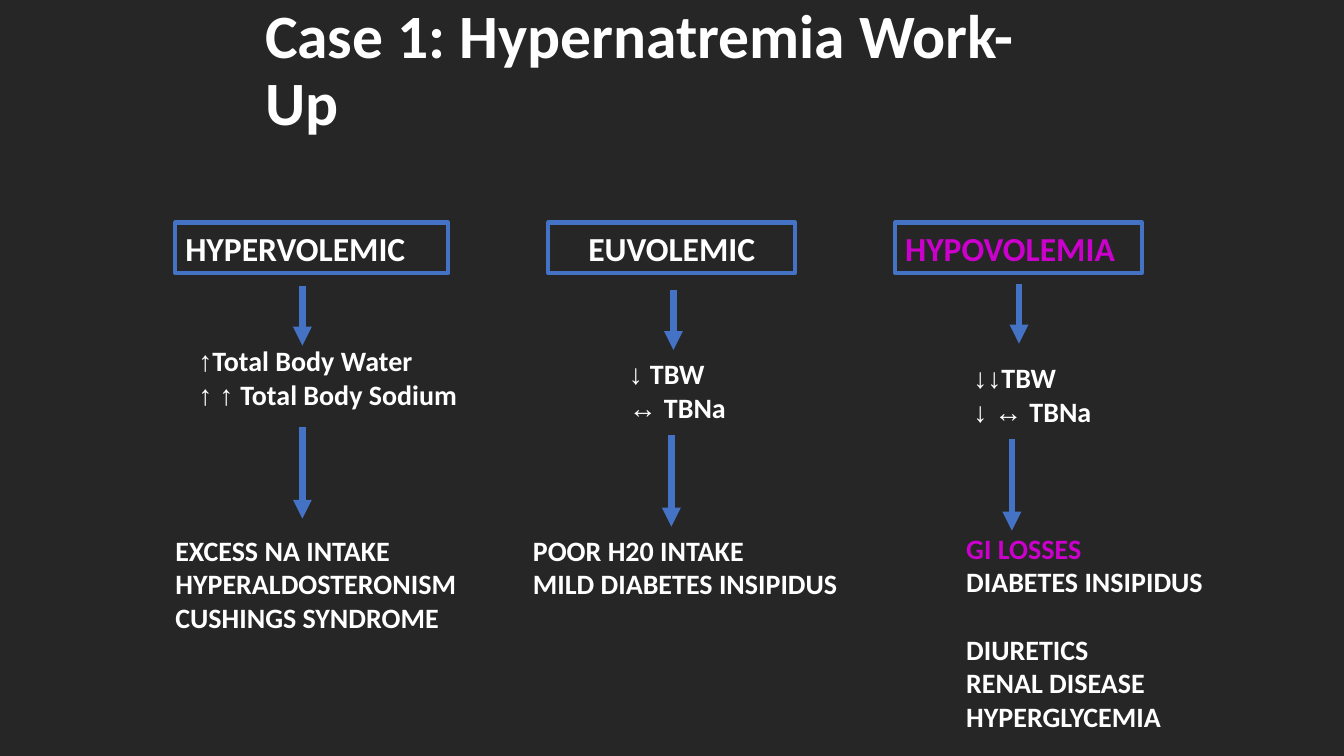
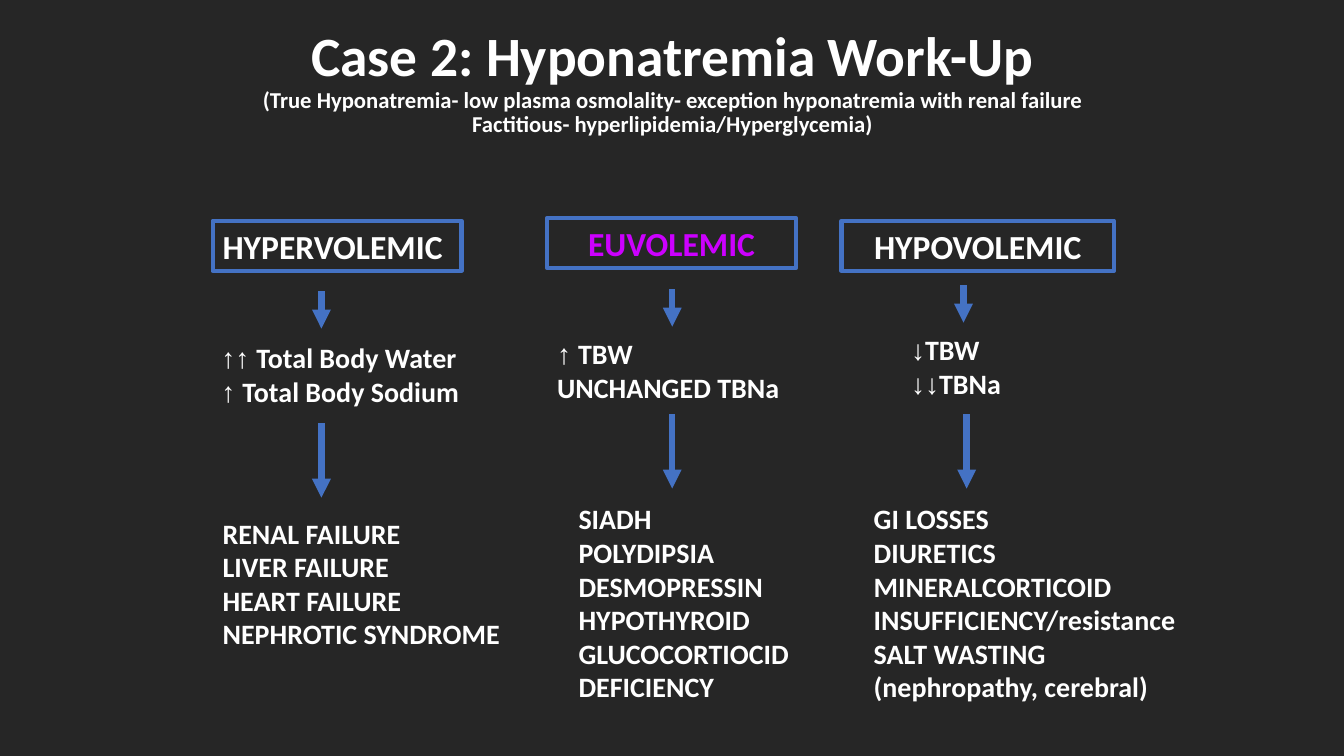
from lxml import etree
from pptx import Presentation
from pptx.dml.color import RGBColor
from pptx.enum.shapes import MSO_CONNECTOR, MSO_SHAPE
from pptx.enum.text import MSO_ANCHOR, PP_ALIGN
from pptx.oxml.ns import qn
from pptx.util import Cm, Pt

COLORS = {"back": "262626", "text": "FFFFFF", "blue": "4472C4",
          "magenta": "CC00CC", "violet": "CC00FF"}
FONT, ARROW_FONT = "Calibri", "Times New Roman"
ARROW_SIGNS = "↑↓↔ "
HEAD_H, LINE_H, INSET = 1.27, 0.85, 0.25
LEFT, CENTER = PP_ALIGN.LEFT, PP_ALIGN.CENTER

# Each column: heading (text, x, y, width, alignment), findings and causes
# (x, y, width, lines), and the x, y where its two arrows start
SLIDES = [
    {"title": [("Case 1: Hypernatremia Work-Up", 44)],
     "title_box": (6.43, 0, 21.03, 3.62), "title_align": LEFT,
     "accent": "magenta", "marked": ["HYPOVOLEMIA", "GI LOSSES"],
     "arrow_lengths": (1.5, 2.3),
     "columns": [
         {"head": ("HYPERVOLEMIC", 4.42, 5.61, 6.88, LEFT),
          "findings": (4.75, 8.53, 7.44, ["↑Total Body Water", "↑ ↑ Total Body Sodium"]),
          "causes": (4.17, 13.31, 8.03, ["EXCESS NA INTAKE", "HYPERALDOSTERONISM",
                                         "CUSHINGS SYNDROME"]),
          "arrows": [(7.62, 7.21), (7.62, 10.77)]},
         {"head": ("EUVOLEMIC", 13.82, 5.61, 6.22, CENTER),
          "findings": (15.6, 8.86, 4.06, ["↓ TBW", "↔ TBNa"]),
          "causes": (13.18, 13.31, 8.89, ["POOR H20 INTAKE", "MILD DIABETES INSIPIDUS"]),
          "arrows": [(16.97, 7.32), (16.92, 10.97)]},
         {"head": ("HYPOVOLEMIA", 22.56, 5.61, 6.22, LEFT),
          "findings": (24.28, 8.97, 4.85, ["↓↓TBW", "↓ ↔ TBNa"]),
          "causes": (24.1, 13.26, 7.39, ["GI LOSSES", "DIABETES INSIPIDUS", "DIURETICS",
                                         "RENAL DISEASE", "HYPERGLYCEMIA"]),
          "gap_before": 2,
          "arrows": [(25.68, 7.16), (25.5, 11.07)]}]},
    {"title": [("Case 2: Hyponatremia Work-Up", 39.6),
               ("(True Hyponatremia- low plasma osmolality- exception "
                "hyponatremia with renal failure", 16.2),
               ("Factitious- hyperlipidemia/Hyperglycemia)", 16.2)],
     "title_box": (2.34, 0.26, 29.21, 3.68), "title_align": CENTER,
     "accent": "violet", "marked": ["EUVOLEMIC"],
     "arrow_lengths": (0.94, 1.87),
     "columns": [
         {"head": ("HYPERVOLEMIC", 5.36, 5.56, 6.27, LEFT),
          "findings": (5.33, 8.46, 8.03, ["↑↑ Total Body Water", "↑ Total Body Sodium"]),
          "causes": (5.36, 12.88, 8.43, ["RENAL FAILURE", "LIVER FAILURE", "HEART FAILURE",
                                         "NEPHROTIC SYNDROME"]),
          "arrows": [(8.1, 7.34), (8.1, 10.67)]},
         {"head": ("EUVOLEMIC", 13.79, 5.49, 6.27, CENTER),
          "findings": (13.79, 8.36, 6.99, ["↑ TBW", "UNCHANGED TBNa"]),
          "causes": (14.33, 12.52, 6.99, ["SIADH", "POLYDIPSIA", "DESMOPRESSIN",
                                          "HYPOTHYROID", "GLUCOCORTIOCID", "DEFICIENCY"]),
          "arrows": [(16.94, 7.29), (16.94, 10.44)]},
         {"head": ("HYPOVOLEMIC", 21.21, 5.56, 6.86, CENTER),
          "findings": (22.71, 8.26, 4.85, ["↓TBW", "↓↓TBNa"]),
          "causes": (21.77, 12.52, 9.3, ["GI LOSSES", "DIURETICS", "MINERALCORTICOID",
                                         "INSUFFICIENCY/resistance", "SALT WASTING",
                                         "(nephropathy, cerebral)"]),
          "arrows": [(24.28, 7.19), (24.36, 10.44)]}]},
]


def write(sp, lines, align, page):
    """Fill a shape with (text, size) lines; leading arrow signs get their own run."""
    tf = sp.text_frame
    tf.word_wrap = True
    for i, (text, size) in enumerate(lines):
        p = tf.paragraphs[0] if i == 0 else tf.add_paragraph()
        p.alignment = align
        words = text.lstrip(ARROW_SIGNS)
        signs = text[:len(text) - len(words)]
        color = page["accent"] if text in page["marked"] else "text"
        for part, font in ((signs, ARROW_FONT), (words, FONT)):
            if part:
                r = p.add_run()
                r.text = part
                r.font.name, r.font.size, r.font.bold = font, Pt(size), True
                r.font.color.rgb = RGBColor.from_string(COLORS[color])
    return tf


def add_arrow(s, x, y, length):
    c = s.shapes.add_connector(MSO_CONNECTOR.STRAIGHT, Cm(x), Cm(y), Cm(x), Cm(y + length))
    c.line.color.rgb = RGBColor.from_string(COLORS["blue"])
    c.line.width = Pt(4.5)
    etree.SubElement(c.line._get_or_add_ln(), qn("a:tailEnd"), type="triangle")
    etree.SubElement(c._element.spPr, qn("a:effectLst"))


prs = Presentation()
prs.slide_width, prs.slide_height = Cm(33.87), Cm(19.05)

# Shared background, set once on the master
fill = prs.slide_master.background.fill
fill.solid()
fill.fore_color.rgb = RGBColor.from_string(COLORS["back"])

for page in SLIDES:
    s = prs.slides.add_slide(prs.slide_layouts[6])

    # Title
    sp = s.shapes.add_textbox(*map(Cm, page["title_box"]))
    tf = write(sp, page["title"], page["title_align"], page)
    tf.vertical_anchor = MSO_ANCHOR.MIDDLE
    for p in tf.paragraphs:
        p.line_spacing = 0.9

    for column in page["columns"]:
        # Framed heading
        text, x, y, w, align = column["head"]
        sp = s.shapes.add_shape(MSO_SHAPE.RECTANGLE, Cm(x), Cm(y), Cm(w), Cm(HEAD_H))
        sp.shadow.inherit = False
        sp.fill.background()
        sp.line.color.rgb = RGBColor.from_string(COLORS["blue"])
        sp.line.width = Pt(3)
        write(sp, [(text, 24)], align, page)

        # Findings, then causes
        for part in ("findings", "causes"):
            x, y, w, lines = column[part]
            sp = s.shapes.add_textbox(Cm(x), Cm(y), Cm(w), Cm(LINE_H * len(lines) + INSET))
            tf = write(sp, [(line, 20) for line in lines], LEFT, page)
        if "gap_before" in column:
            tf.paragraphs[column["gap_before"]].space_before = Pt(24)

        # Arrows between the three levels
        for (x, y), length in zip(column["arrows"], page["arrow_lengths"]):
            add_arrow(s, x, y, length)

prs.save("out.pptx")
